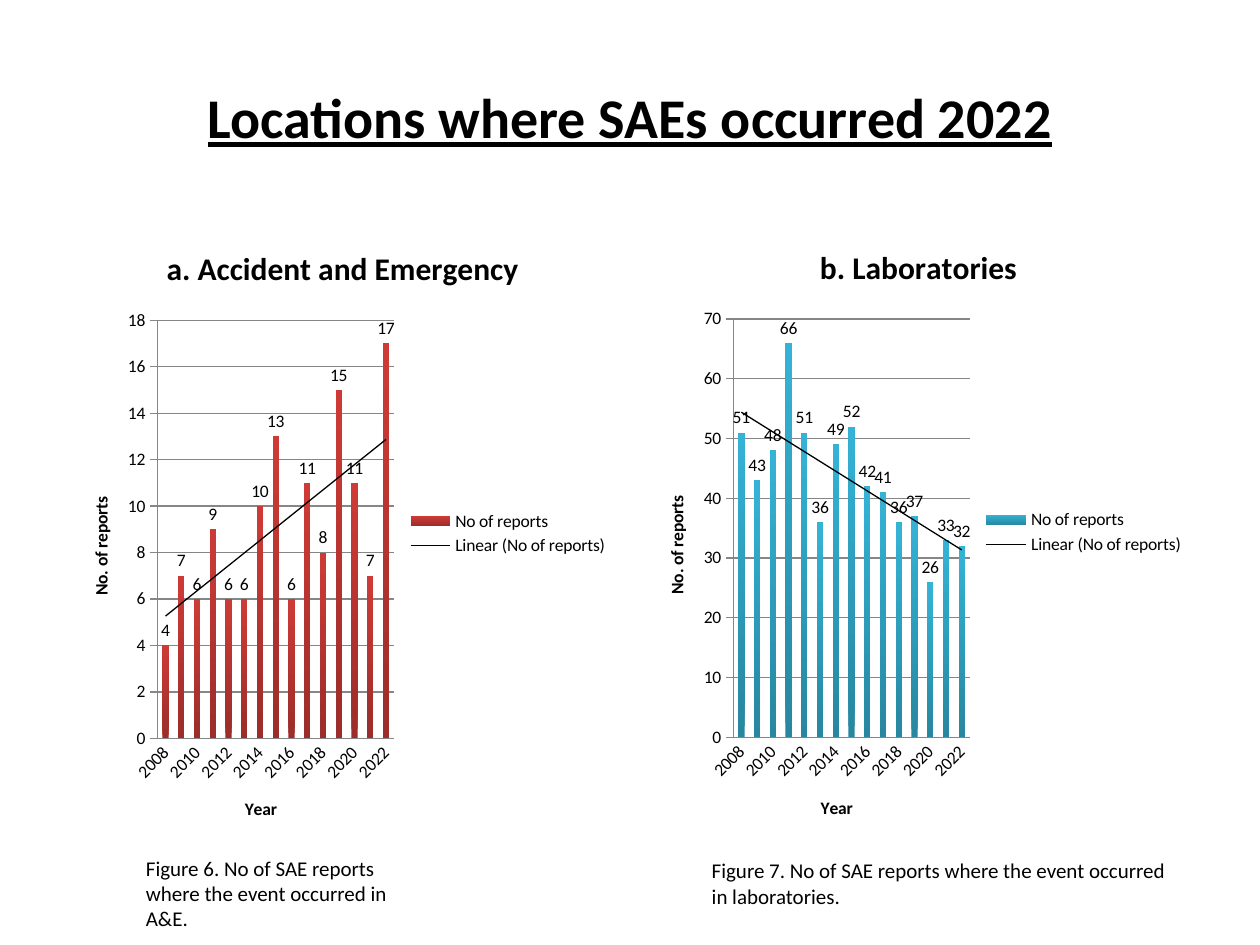
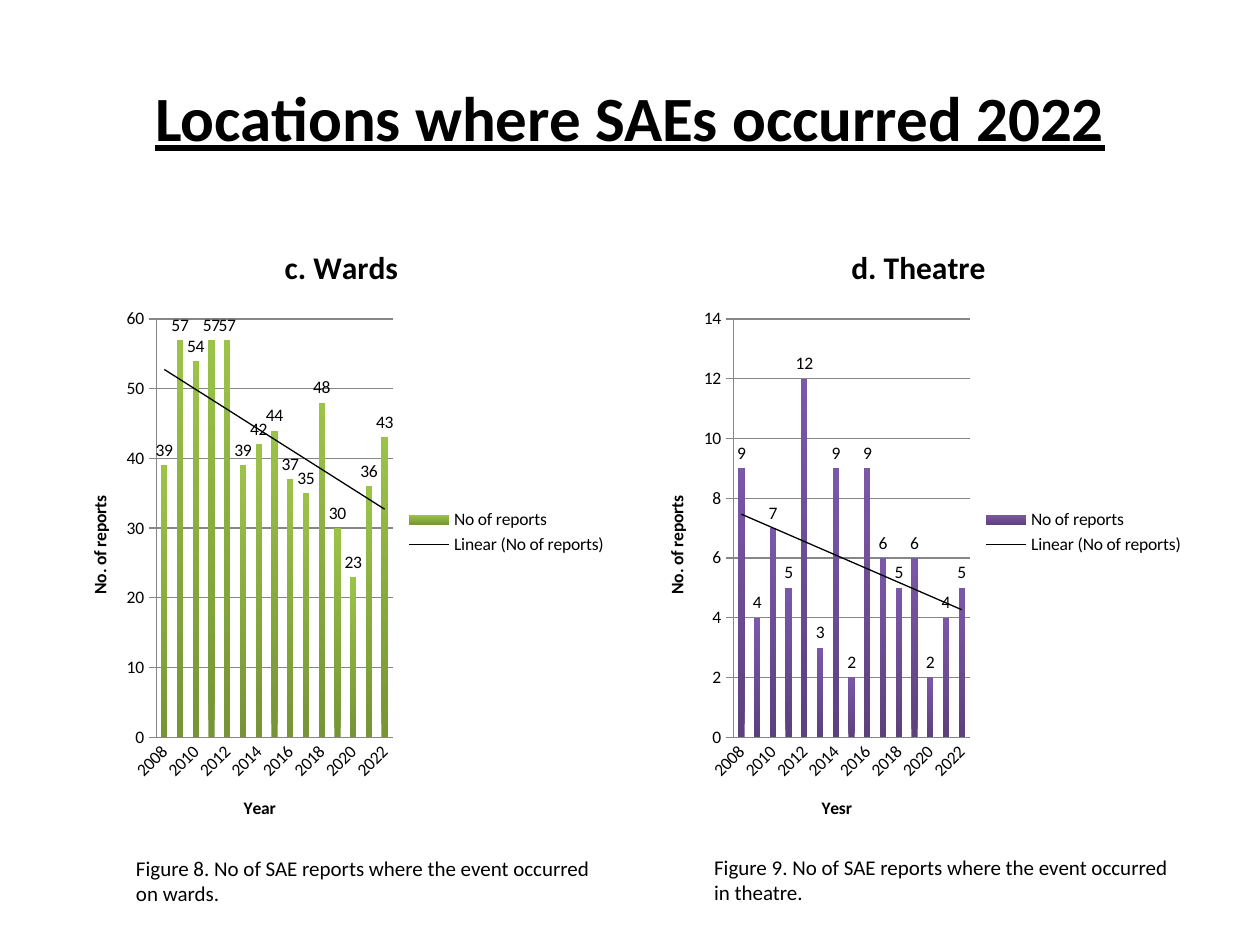
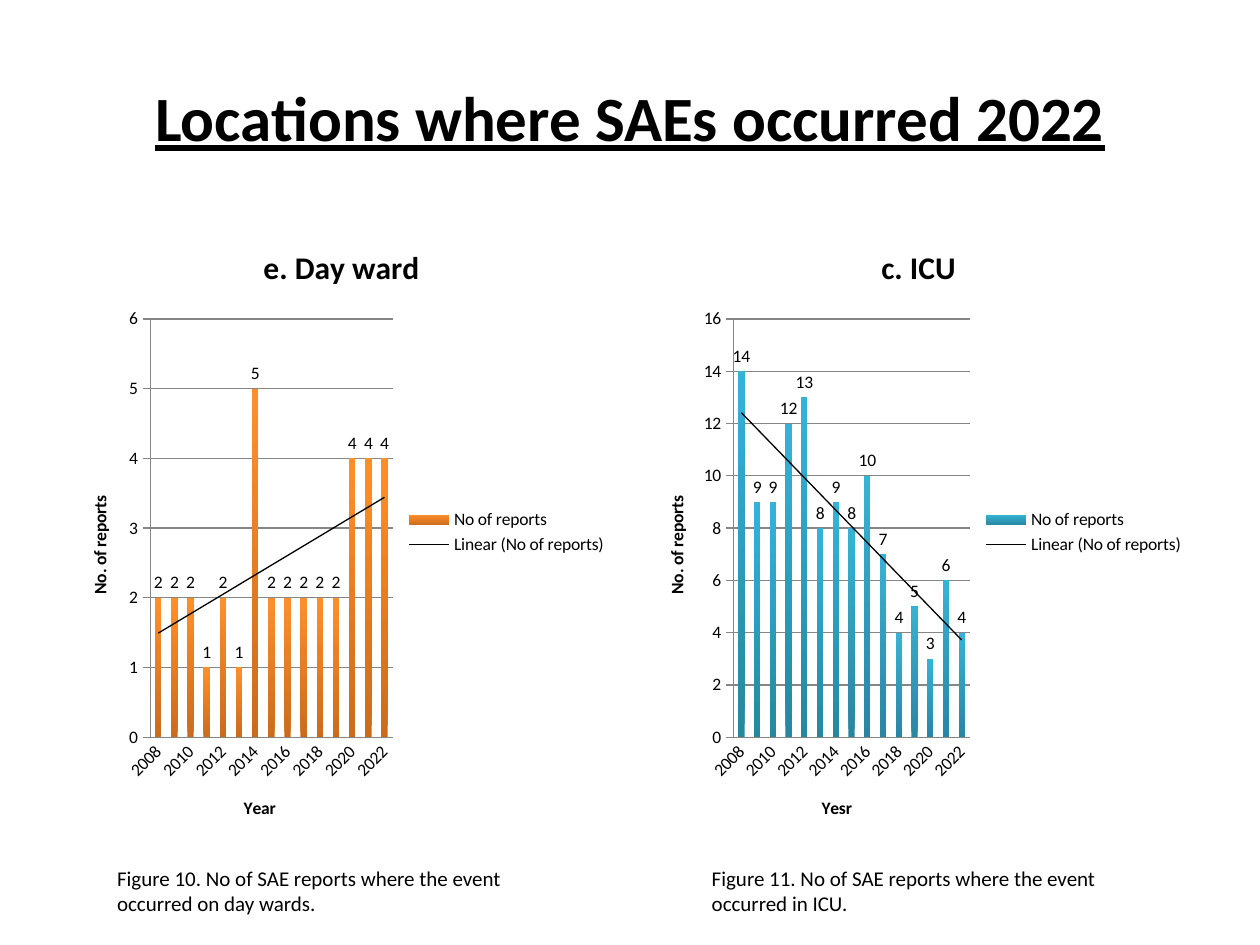
import lxml.etree
import pptx
import pptx.chart.data
import pptx.dml.color
import pptx.enum.chart
import pptx.enum.text
import pptx.oxml
import pptx.oxml.ns
import pptx.util

Pt = pptx.util.Pt
YEARS = [str(year) for year in range(2008, 2023)]
RED = ("9B2D2A", "CE3B37")
AQUA = ("2787A0", "34B3D6")
GREEN = ("769535", "9BC348")
PURPLE = ("5D417E", "7B57A8")
ORANGE = ("CB6C1D", "FF8F2A")
TREND_XML = (
    f'<c:trendline {pptx.oxml.ns.nsdecls("c", "a")}>'
    '<c:spPr><a:ln w="9525"><a:solidFill><a:srgbClr val="000000"/></a:solidFill></a:ln></c:spPr>'
    '<c:trendlineType val="linear"/><c:dispRSqr val="0"/><c:dispEq val="0"/></c:trendline>'
)


def color(hex_value):
    return pptx.dml.color.RGBColor.from_string(hex_value)


def style_font(font, size, bold=False, underline=False):
    font.name = "Calibri"
    font.size = Pt(size)
    font.bold = bold
    font.underline = underline
    font.color.rgb = color("000000")


def write_text(frame, text, size=12, bold=False, underline=False, align=None):
    paragraph = frame.paragraphs[0]
    paragraph.alignment = align
    run = paragraph.add_run()
    run.text = text
    style_font(run.font, size, bold, underline)


class Deck:
    """Holds the presentation style and the current slide."""

    chart_size = (318.25, 356.4)
    grey = "868686"

    def __init__(self):
        self.presentation = pptx.Presentation()
        self.presentation.slide_width = Pt(720)
        self.presentation.slide_height = Pt(540)
        self.slide = None

    def add_slide(self, title, size):
        self.slide = self.presentation.slides.add_slide(self.presentation.slide_layouts[5])
        heading = self.slide.shapes.title
        heading.left, heading.top = Pt(36), Pt(21.6)
        heading.width, heading.height = Pt(648), Pt(90)
        frame = heading.text_frame
        frame.auto_size = pptx.enum.text.MSO_AUTO_SIZE.NONE
        frame.vertical_anchor = pptx.enum.text.MSO_ANCHOR.MIDDLE
        write_text(frame, title, size, True, True, pptx.enum.text.PP_ALIGN.CENTER)

    def add_caption(self, text, left, top, width=278, height=36):
        caption = self.slide.shapes.add_textbox(Pt(left), Pt(top), Pt(width), Pt(height))
        caption.text_frame.word_wrap = True
        caption.text_frame.auto_size = pptx.enum.text.MSO_AUTO_SIZE.SHAPE_TO_FIT_TEXT
        write_text(caption.text_frame, text)

    def style_axis(self, axis, title, tick_mark):
        write_text(axis.axis_title.text_frame, title, 10, True)
        axis.major_tick_mark = tick_mark
        axis.minor_tick_mark = pptx.enum.chart.XL_TICK_MARK.NONE
        axis.format.line.color.rgb = color(self.grey)
        axis.format.line.width = Pt(0.75)

    def add_reports_chart(self, title, reports, shades, left, top=126, year_title="Year"):
        chart_data = pptx.chart.data.CategoryChartData()
        chart_data.categories = YEARS
        chart_data.add_series("No of reports", reports)
        width, height = self.chart_size
        chart = self.slide.shapes.add_chart(
            pptx.enum.chart.XL_CHART_TYPE.COLUMN_CLUSTERED,
            Pt(left), Pt(top), Pt(width), Pt(height), chart_data,
        ).chart
        style_font(chart.font, 10)
        write_text(chart.chart_title.text_frame, title, 18, True)
        chart.chart_title.include_in_layout = False
        chart.has_legend = True
        chart.legend.position = pptx.enum.chart.XL_LEGEND_POSITION.RIGHT
        chart.legend.include_in_layout = False

        ticks = pptx.enum.chart.XL_TICK_MARK
        self.style_axis(chart.category_axis, year_title, ticks.NONE)
        self.style_axis(chart.value_axis, "No. of reports", ticks.OUTSIDE)
        gridline = chart.value_axis.major_gridlines.format.line
        gridline.color.rgb = color(self.grey)
        gridline.width = Pt(0.75)

        plot = chart.plots[0]
        plot.gap_width = 150
        plot.vary_by_categories = False
        series = plot.series[0]
        fill = series.format.fill
        fill.gradient()
        fill.gradient_angle = 90
        for stop, shade in zip(fill.gradient_stops, shades):
            stop.color.rgb = color(shade)
        labels = series.data_labels
        labels.show_value = True
        labels.position = pptx.enum.chart.XL_LABEL_POSITION.OUTSIDE_END
        style_font(labels.font, 10)
        categories = series._element.find(pptx.oxml.ns.qn("c:cat"))
        categories.addprevious(pptx.oxml.parse_xml(TREND_XML))


def main():
    deck = Deck()
    heading = "Locations where SAEs occurred 2022"
    left, right = 36, 365.75

    deck.add_slide(heading, 32)
    deck.add_reports_chart("a. Accident and Emergency",
                           [4, 7, 6, 9, 6, 6, 10, 13, 6, 11, 8, 15, 11, 7, 17], RED, 36.7, 126.7)
    deck.add_reports_chart("b. Laboratories",
                           [51, 43, 48, 66, 51, 36, 49, 52, 42, 41, 36, 37, 26, 33, 32], AQUA, right)
    deck.add_caption("Figure 6. No of SAE reports where the event occurred in A&E.",
                     76.3, 485.3, 175.7, 51)
    deck.add_caption("Figure 7. No of SAE reports where the event occurred in laboratories.",
                     399.6, 486.7)

    deck.add_slide(heading, 36)
    deck.add_reports_chart("c. Wards",
                           [39, 57, 54, 57, 57, 39, 42, 44, 37, 35, 48, 30, 23, 36, 43], GREEN, left)
    deck.add_reports_chart("d. Theatre", [9, 4, 7, 5, 12, 3, 9, 2, 9, 6, 5, 6, 2, 4, 5],
                           PURPLE, right, year_title="Yesr")
    deck.add_caption("Figure 8. No of SAE reports where the event occurred on wards.", 70.6, 485.3)
    deck.add_caption("Figure 9. No of SAE reports where the event occurred in theatre.", 401, 484.6)

    deck.add_slide(heading, 36)
    deck.add_reports_chart("e. Day ward", [2, 2, 2, 1, 2, 1, 5, 2, 2, 2, 2, 2, 4, 4, 4],
                           ORANGE, left)
    deck.add_reports_chart("c. ICU", [14, 9, 9, 12, 13, 8, 9, 8, 10, 7, 4, 5, 3, 6, 4],
                           AQUA, right, year_title="Yesr")
    deck.add_caption("Figure 10. No of SAE reports where the event occurred on day wards.", 59.8, 491)
    deck.add_caption("Figure 11. No of SAE reports where the event occurred in ICU.", 399.6, 491)

    deck.presentation.save("out.pptx")


if __name__ == "__main__":
    main()
